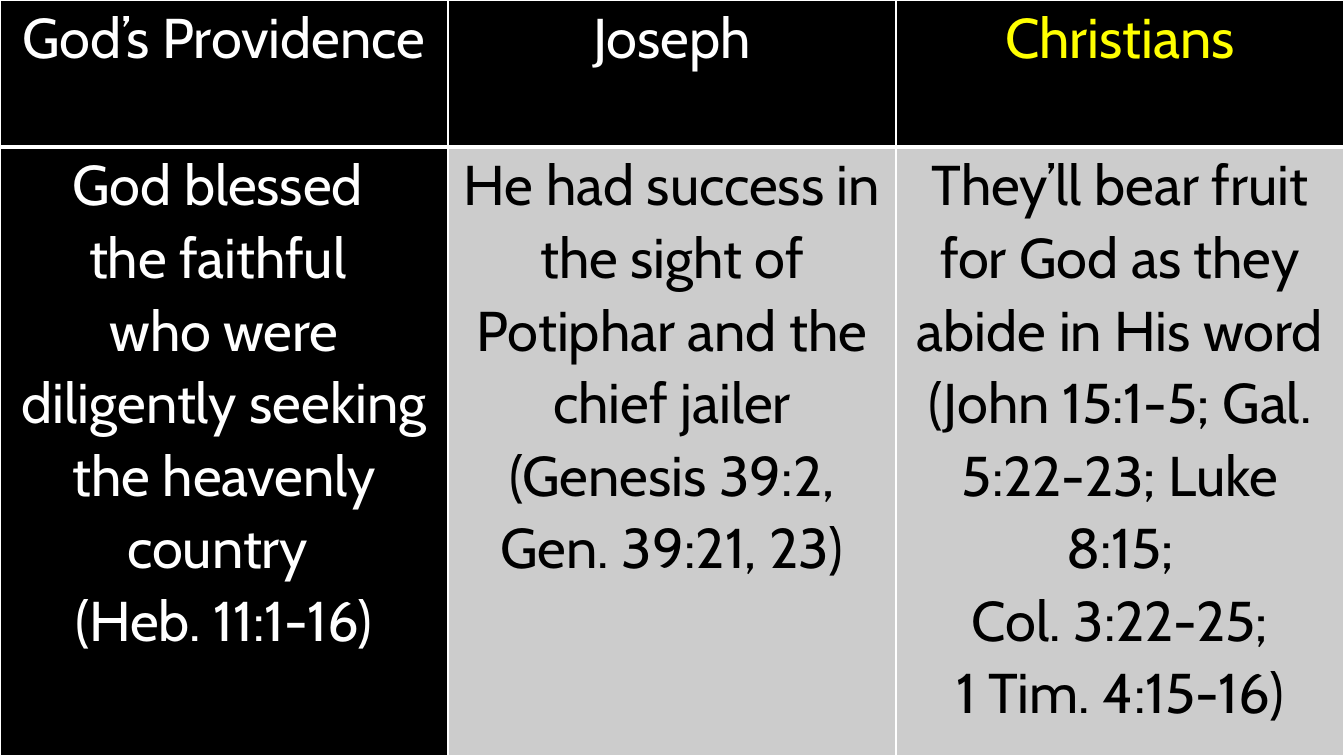
import dataclasses

import lxml.etree
import pptx
import pptx.dml.color
import pptx.enum.text
import pptx.oxml.ns
import pptx.util

Cm = pptx.util.Cm
Pt = pptx.util.Pt


@dataclasses.dataclass(frozen=True)
class Theme:
    font: str = "Cabin"
    size: int = 40
    spacing: float = 1.07
    black: str = "000000"
    white: str = "FFFFFF"
    yellow: str = "FFFF00"
    grey: str = "CCCCCC"
    thin: float = 1
    thick: float = 3


class Deck:
    """Draws tables on the current slide in one theme."""

    def __init__(self, prs, theme):
        self.theme = theme
        self.s = prs.slides.add_slide(prs.slide_layouts[6])
        self.fill(self.s.background.fill, theme.black)

    def fill(self, fill, color):
        fill.solid()
        fill.fore_color.rgb = pptx.dml.color.RGBColor.from_string(color)

    def table(self, widths, heights, rows):
        shape = self.s.shapes.add_table(
            len(rows), len(widths), 0, 0, Cm(sum(widths)), Cm(sum(heights)))
        tbl = shape.table
        tbl.first_row = tbl.horz_banding = False
        for col, width in zip(tbl.columns, widths):
            col.width = Cm(width)
        for i, (height, row) in enumerate(zip(heights, rows)):
            tbl.rows[i].height = Cm(height)
            for j, (lines, color, back) in enumerate(row):
                cell = tbl.cell(i, j)
                self.text(cell, lines, color)
                self.fill(cell.fill, back)
                t = self.theme
                top, bottom = (t.thin, t.thick) if i == 0 else (t.thick, t.thin)
                self.borders(cell, {"L": t.thin, "R": t.thin, "T": top, "B": bottom})

    def text(self, cell, lines, color):
        cell.margin_left = cell.margin_right = Cm(0.18)
        cell.margin_top = cell.margin_bottom = 0
        tf = cell.text_frame
        for n, line in enumerate(lines):
            p = tf.add_paragraph() if n else tf.paragraphs[0]
            p.alignment = pptx.enum.text.PP_ALIGN.CENTER
            p.line_spacing = self.theme.spacing
            r = p.add_run()
            r.text = line
            r.font.name = self.theme.font
            r.font.size = Pt(self.theme.size)
            r.font.bold = False
            self.fill(r.font.fill, color)

    def borders(self, cell, widths):
        qn = pptx.oxml.ns.qn
        props = cell._tc.get_or_add_tcPr()
        for n, (side, width) in enumerate(widths.items()):
            ln = lxml.etree.Element(qn(f"a:ln{side}"), w=str(Pt(width)))
            solid = lxml.etree.SubElement(ln, qn("a:solidFill"))
            lxml.etree.SubElement(solid, qn("a:srgbClr"), val=self.theme.white)
            props.insert(n, ln)


def main():
    prs = pptx.Presentation()
    prs.slide_width, prs.slide_height = Cm(33.87), Cm(19.05)
    t = Theme()
    header = [
        (["God’s Providence"], t.white, t.black),
        (["Joseph"], t.white, t.black),
        (["Christians"], t.yellow, t.black),
    ]
    body = [
        (["God blessed ", "the faithful ",
          "who were diligently seeking the heavenly",
          "country ", "(Heb. 11:1-16)"], t.white, t.black),
        (["He had success in the sight of Potiphar and the chief jailer "
          "(Genesis 39:2, Gen. 39:21, 23)"], t.black, t.grey),
        (["They’ll bear fruit for God as they abide in His word "
          "(John 15:1-5; Gal. 5:22-23; Luke 8:15;",
          "Col. 3:22-25;", "1 Tim. 4:15-16)"], t.black, t.grey),
    ]
    Deck(prs, t).table([11.29] * 3, [3.71, 15.34], [header, body])
    prs.save("out.pptx")


if __name__ == "__main__":
    main()
